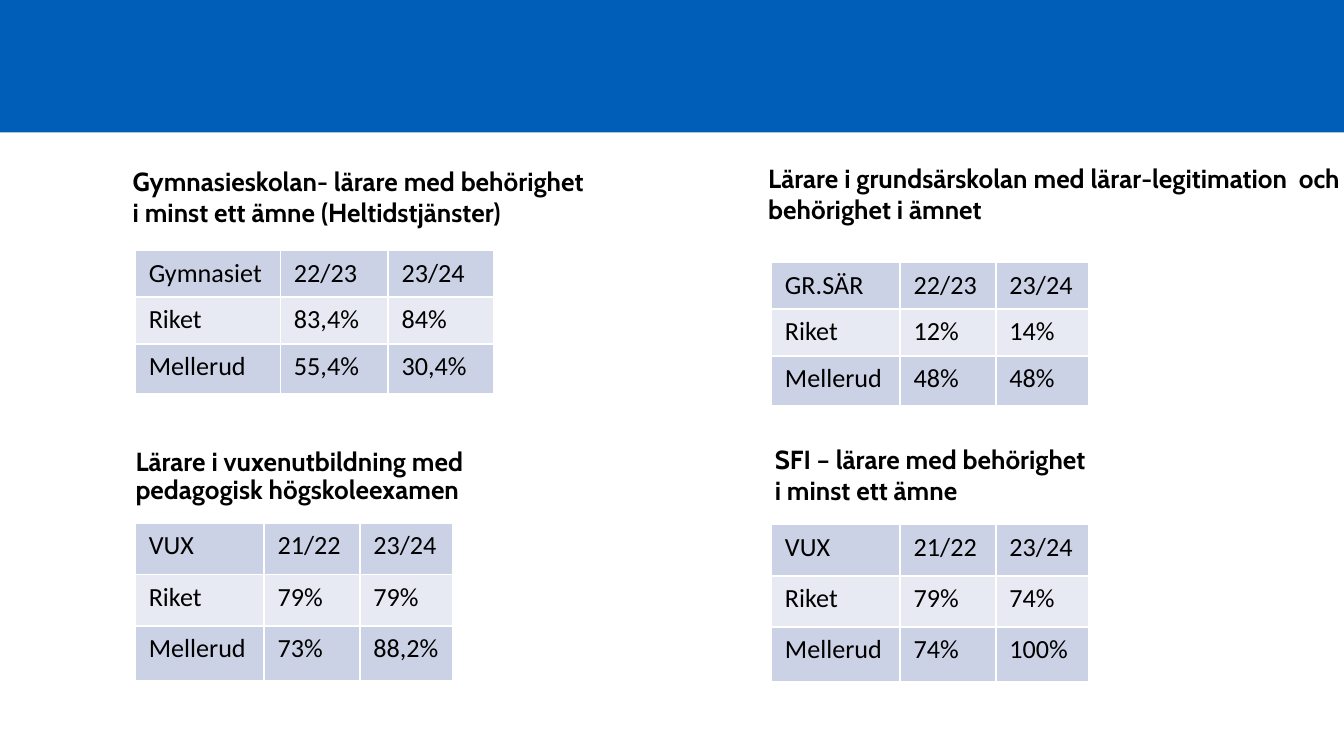
from lxml import etree
from pptx import Presentation, util as u
from pptx.dml.color import RGBColor
from pptx.enum import shapes, text
from pptx.oxml.ns import qn

BLACK, WHITE, BLUE = "000000", "FFFFFF", "005EB8"
DARK_ROW, LIGHT_ROW = "CCD2E6", "E7EAF3"


def colour(value):
    """Turn a hex string into a colour."""
    return RGBColor.from_string(value)


def add_span(para, words, font, bold=False):
    """Add one styled run to a paragraph."""
    span = para.add_run()
    span.text = words
    span.font.name = font
    span.font.size = u.Pt(14)
    span.font.bold = bold
    span.font.color.rgb = colour(BLACK)


def add_banner(page, width, height):
    """Draw the coloured band along the top."""
    banner = page.shapes.add_shape(
        shapes.MSO_SHAPE.RECTANGLE, 0, 0, u.Pt(width), u.Pt(height))
    banner.shadow.inherit = False
    banner.fill.solid()
    banner.fill.fore_color.rgb = colour(BLUE)
    banner.line.fill.background()


def add_heading(page, place, lines, spacing=1.0, anchor=text.MSO_ANCHOR.TOP):
    """Add a bold heading with a line break between its lines."""
    box = page.shapes.add_textbox(*map(u.Pt, place))
    frame = box.text_frame
    frame.word_wrap = True
    frame.vertical_anchor = anchor
    para = frame.paragraphs[0]
    para.line_spacing = spacing
    for index, line in enumerate(lines):
        if index:
            para.add_line_break()
        add_span(para, line, "Cabin", bold=True)


def add_borders(cell):
    """Give a cell thin white lines on every side."""
    properties = cell._tc.get_or_add_tcPr()
    for side in ("lnL", "lnR", "lnT", "lnB"):
        line = etree.SubElement(properties, qn(f"a:{side}"), w=str(u.Pt(1)))
        fill = etree.SubElement(line, qn("a:solidFill"))
        etree.SubElement(fill, qn("a:srgbClr"), val=WHITE)


def add_figures(page, left, top, widths, heights, rows):
    """Add a table with alternating row colours."""
    frame = page.shapes.add_table(
        len(rows), len(widths), u.Pt(left), u.Pt(top),
        u.Pt(sum(widths)), u.Pt(sum(heights)))
    table = frame.table
    for column, width in zip(table.columns, widths):
        column.width = u.Pt(width)
    for index, (row, height, values) in enumerate(zip(table.rows, heights, rows)):
        row.height = u.Pt(height)
        for cell, value in zip(row.cells, values):
            add_borders(cell)
            cell.fill.solid()
            cell.fill.fore_color.rgb = colour(LIGHT_ROW if index % 2 else DARK_ROW)
            add_span(cell.text_frame.paragraphs[0], value, "Calibri")


def main():
    """Build the slide and save it."""
    deck = Presentation()
    deck.slide_width, deck.slide_height = u.Pt(720), u.Pt(405)
    page = deck.slides.add_slide(deck.slide_layouts[6])
    add_banner(page, 720, 71)

    add_heading(page, (64, 85, 304.5, 41),
                ["Gymnasieskolan- lärare med behörighet",
                 "i minst ett ämne (Heltidstjänster)"])
    add_heading(page, (404.5, 83.5, 332.5, 41),
                ["Lärare i grundsärskolan med lärar-legitimation  och behörighet i ämnet"])
    add_heading(page, (65.5, 216.7, 229.7, 57.6),
                ["Lärare i vuxenutbildning med ", "pedagogisk högskoleexamen"],
                spacing=0.9, anchor=text.MSO_ANCHOR.BOTTOM)
    add_heading(page, (408, 234, 309, 41),
                ["SFI – lärare med behörighet", "i minst ett ämne"])

    left, right = 72.5, 413.3
    wide, narrow = (77.8, 57.6, 56.4), (69, 51.3, 49.7)
    low, high = (25, 25.2, 26.4), (27.5, 27.5, 29.2)
    add_figures(page, left, 134.2, wide, low, [
        ("Gymnasiet", "22/23", "23/24"),
        ("Riket", "83,4%", "84%"),
        ("Mellerud", "55,4%", "30,4%")])
    add_figures(page, right, 140.6, narrow, low, [
        ("GR.SÄR", "22/23", "23/24"),
        ("Riket", "12%", "14%"),
        ("Mellerud", "48%", "48%")])
    add_figures(page, left, 280.3, narrow, high, [
        ("VUX", "21/22", "23/24"),
        ("Riket", "79%", "79%"),
        ("Mellerud", "73%", "88,2%")])
    add_figures(page, right, 281, narrow, high, [
        ("VUX", "21/22", "23/24"),
        ("Riket", "79%", "74%"),
        ("Mellerud", "74%", "100%")])
    deck.save("out.pptx")


if __name__ == "__main__":
    main()
